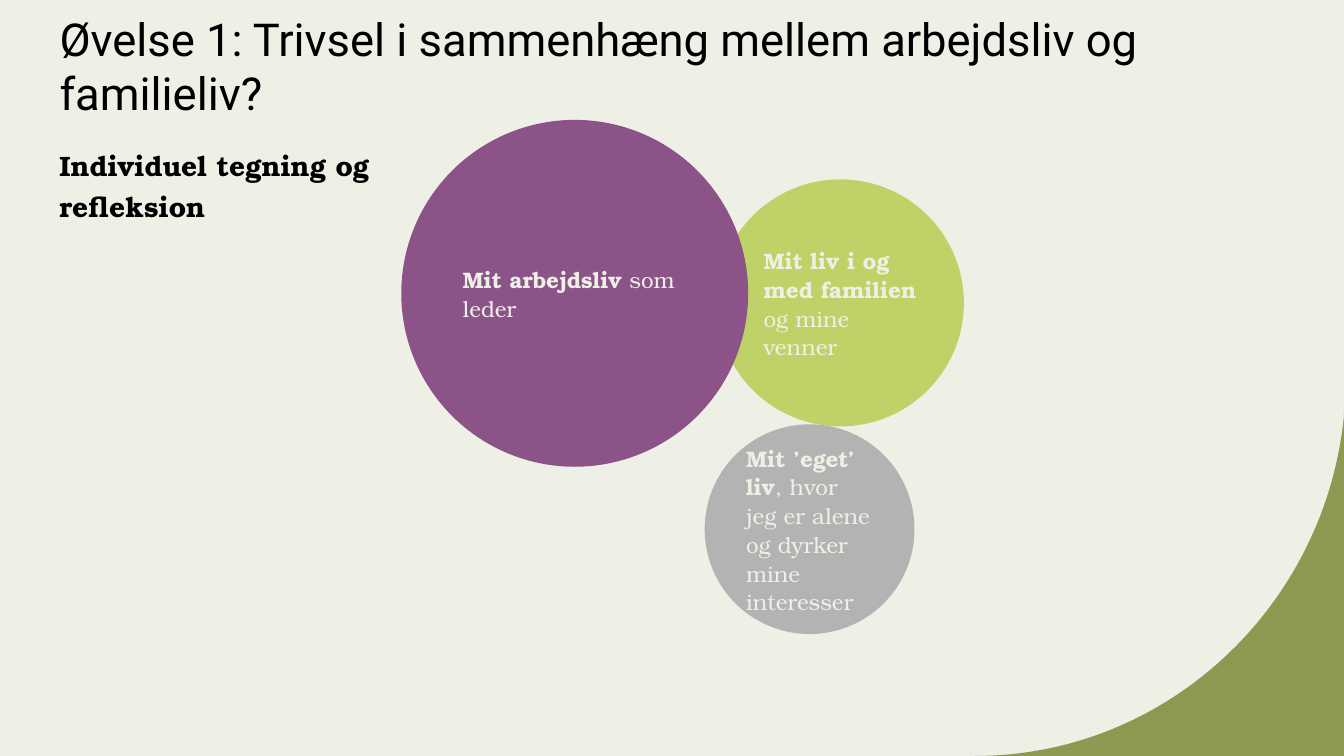
from pptx import Presentation
from pptx.dml.color import RGBColor
from pptx.enum.shapes import MSO_SHAPE
from pptx.enum.text import MSO_ANCHOR, MSO_AUTO_SIZE, PP_ALIGN
from pptx.util import Inches, Pt

COLORS = {
    "background": "EEF0E5",
    "corner": "8D9950",
    "family": "BFD268",
    "work": "8C5389",
    "own": "B4B2B2",
    "text": "000000",
}
TITLE_FONT = "Roboto"
BODY_FONT = "TeX Gyre Bonum"
CURVE_STEPS = 60


def color(name):
    return RGBColor.from_string(COLORS[name])


def set_font(font, name, size, color_name):
    font.name = name
    font.size = Pt(size)
    font.color.rgb = color(color_name)


def curve_points(start, control_1, control_2, end):
    """Points along a cubic Bézier curve."""
    points = []
    for step in range(CURVE_STEPS + 1):
        t = step / CURVE_STEPS
        weights = ((1 - t) ** 3, 3 * t * (1 - t) ** 2, 3 * t**2 * (1 - t), t**3)
        corners = (start, control_1, control_2, end)
        points.append(tuple(
            Inches(sum(w * corner[axis] for w, corner in zip(weights, corners)))
            for axis in (0, 1)))
    return points


def add_corner(slide):
    points = curve_points((9.67, 7.5), (11.57, 7.5), (13.14, 6.02), (13.33, 4.13))
    points += [(Inches(13.33), Inches(4.08)), (Inches(13.33), Inches(7.5))]
    builder = slide.shapes.build_freeform(*points[0], scale=1.0)
    builder.add_line_segments(points[1:], close=True)
    corner = builder.convert_to_shape()
    corner.shadow.inherit = False
    corner.fill.solid()
    corner.fill.fore_color.rgb = color("corner")
    corner.line.fill.background()


def set_title(slide, text):
    title = slide.shapes.title
    title.left, title.top = Inches(0.49), Inches(0.08)
    title.width, title.height = Inches(11.21), Inches(1.14)
    frame = title.text_frame
    frame.text = text
    frame.auto_size = MSO_AUTO_SIZE.NONE
    frame.vertical_anchor = MSO_ANCHOR.MIDDLE
    para = frame.paragraphs[0]
    para.alignment = PP_ALIGN.LEFT
    set_font(para.font, TITLE_FONT, 32.4, "text")


def add_instruction(slide, text):
    box = slide.shapes.add_textbox(Inches(0.49), Inches(1.36), Inches(3.68), Inches(5.47))
    box.text_frame.word_wrap = True
    para = box.text_frame.paragraphs[0]
    para.text = text
    para.line_spacing = 1.2
    set_font(para.font, BODY_FONT, 20, "text")
    para.font.bold = True


def add_circle(slide, left, top, diameter, color_name, bold_text, plain_text):
    circle = slide.shapes.add_shape(
        MSO_SHAPE.OVAL, Inches(left), Inches(top), Inches(diameter), Inches(diameter))
    circle.shadow.inherit = False
    circle.fill.solid()
    circle.fill.fore_color.rgb = color(color_name)
    circle.line.color.rgb = color(color_name)
    circle.line.width = Pt(1.5)
    frame = circle.text_frame
    frame.word_wrap = True
    frame.vertical_anchor = MSO_ANCHOR.MIDDLE
    para = frame.paragraphs[0]
    para.alignment = PP_ALIGN.LEFT
    para.line_spacing = 1.07
    para.space_after = Pt(8)
    set_font(para.font, BODY_FONT, 16, "background")
    for text, bold in ((bold_text, True), (plain_text, False)):
        span = para.add_run()
        span.text = text
        span.font.bold = bold


def main():
    deck = Presentation()
    deck.slide_width, deck.slide_height = Inches(13.33), Inches(7.5)
    slide = deck.slides.add_slide(deck.slide_layouts.get_by_name("Title Only"))
    slide.background.fill.solid()
    slide.background.fill.fore_color.rgb = color("background")

    add_corner(slide)
    set_title(slide, "Øvelse 1: Trivsel i sammenhæng mellem arbejdsliv og familieliv?")
    add_instruction(slide, "Individuel tegning og refleksion")
    add_circle(slide, 7.12, 1.79, 2.43, "family",
               "Mit liv i og med familien ", "og mine venner")
    add_circle(slide, 3.99, 1.2, 3.42, "work", "Mit arbejdsliv ", "som leder")
    add_circle(slide, 7, 4.22, 2.06, "own",
               "Mit ’eget’ liv", ", hvor jeg er alene og dyrker mine interesser")
    deck.save("out.pptx")


if __name__ == "__main__":
    main()
